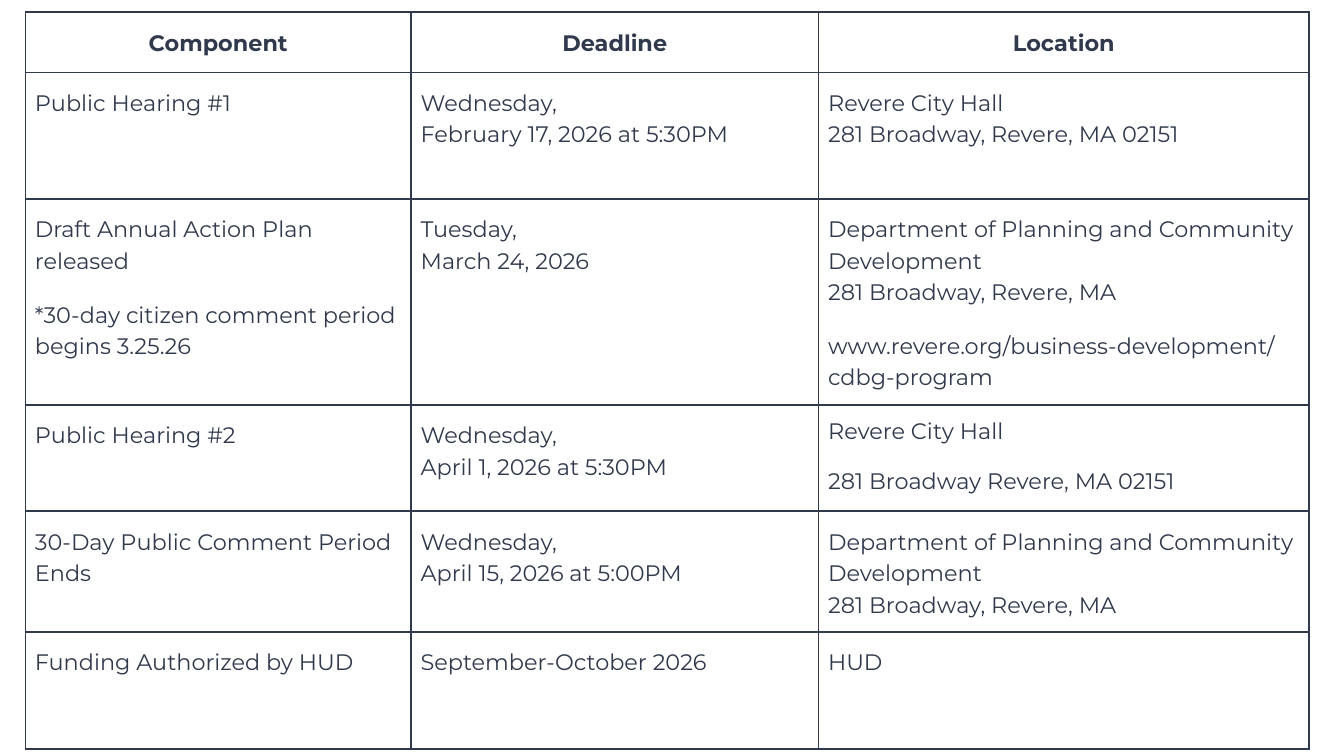
from lxml.etree import SubElement
from pptx import Presentation
from pptx.dml.color import RGBColor
from pptx.enum.text import PP_ALIGN
from pptx.oxml.ns import qn
from pptx.util import Cm, Pt

INK = "31394D"
WHITE = "FFFFFF"
FONT = "Montserrat"
COLS = [7.29, 7.7, 9.27]
HEIGHTS = [1.14, 2.39, 3.58, 2.01, 2.13, 2.21]
DEPARTMENT = "Department of Planning and Community Development\n281 Broadway, Revere, MA"
ROWS = [
    ["Component", "Deadline", "Location"],
    ["Public Hearing #1", "Wednesday,\nFebruary 17, 2026 at 5:30PM",
     "Revere City Hall\v281 Broadway, Revere, MA 02151"],
    ["Draft Annual Action Plan released\n\n*30-day citizen comment period begins 3.25.26",
     "Tuesday,\nMarch 24, 2026",
     DEPARTMENT + "\n\nwww.revere.org/business-development/cdbg-program"],
    ["Public Hearing #2", "Wednesday,\nApril 1, 2026 at 5:30PM",
     "Revere City Hall\n\n281 Broadway Revere, MA 02151"],
    ["30-Day Public Comment Period Ends", "Wednesday,\nApril 15, 2026 at 5:00PM", DEPARTMENT],
    ["Funding Authorized by HUD", "September-October 2026", "HUD"],
]
SINGLE_SPACED = (3, 2)


def color(value):
    """Return a colour from a hex string."""
    return RGBColor.from_string(value)


def add_borders(cell, value):
    """Draw a one-point line on every side of a cell."""
    tc_pr = cell._tc.get_or_add_tcPr()
    for side in ("a:lnL", "a:lnR", "a:lnT", "a:lnB"):
        ln = SubElement(tc_pr, qn(side), w=str(Pt(1)))
        fill = SubElement(ln, qn("a:solidFill"))
        SubElement(fill, qn("a:srgbClr"), val=value)


def add_run(p, text, bold):
    """Add one formatted run to a paragraph."""
    r = p.add_run()
    r.text = text
    r.font.name = FONT
    r.font.size = Pt(12)
    r.font.bold = bold
    r.font.color.rgb = color(INK)


def add_text(tf, text, header, spacing):
    """Fill a cell: a newline starts a paragraph, a blank line a spaced one."""
    p = tf.paragraphs[0]
    for i, block in enumerate(text.split("\n\n")):
        for j, line in enumerate(block.split("\n")):
            if i or j:
                p = tf.add_paragraph()
            p.alignment = PP_ALIGN.CENTER if header else PP_ALIGN.LEFT
            p.line_spacing = spacing
            p.space_before = Pt(12 if i and not j else 0)
            for k, part in enumerate(line.split("\v")):
                if k:
                    p.add_line_break()
                add_run(p, part, header)


def format_cell(cell):
    """Set the margins, borders and fill of a cell."""
    cell.margin_left = cell.margin_right = Cm(0.18)
    cell.margin_top = cell.margin_bottom = Cm(0.25)
    add_borders(cell, INK)
    cell.fill.solid()
    cell.fill.fore_color.rgb = color(WHITE)


def add_schedule(s):
    """Add the schedule table to the slide."""
    table = s.shapes.add_table(len(ROWS), len(COLS), Cm(0.48), Cm(0.23),
                               Cm(sum(COLS)), Cm(sum(HEIGHTS))).table
    table.horz_banding = False
    for column, width in zip(table.columns, COLS):
        column.width = Cm(width)
    for i, (row, height) in enumerate(zip(table.rows, HEIGHTS)):
        row.height = Cm(height)
        for j, text in enumerate(ROWS[i]):
            cell = table.cell(i, j)
            format_cell(cell)
            spacing = 1.0 if (i, j) == SINGLE_SPACED else 1.15
            add_text(cell.text_frame, text, i == 0, spacing)


def main():
    """Build and save the presentation."""
    prs = Presentation()
    prs.slide_width, prs.slide_height = Cm(25.4), Cm(14.29)
    s = prs.slides.add_slide(prs.slide_layouts[6])
    add_schedule(s)
    prs.save("out.pptx")


if __name__ == "__main__":
    main()
